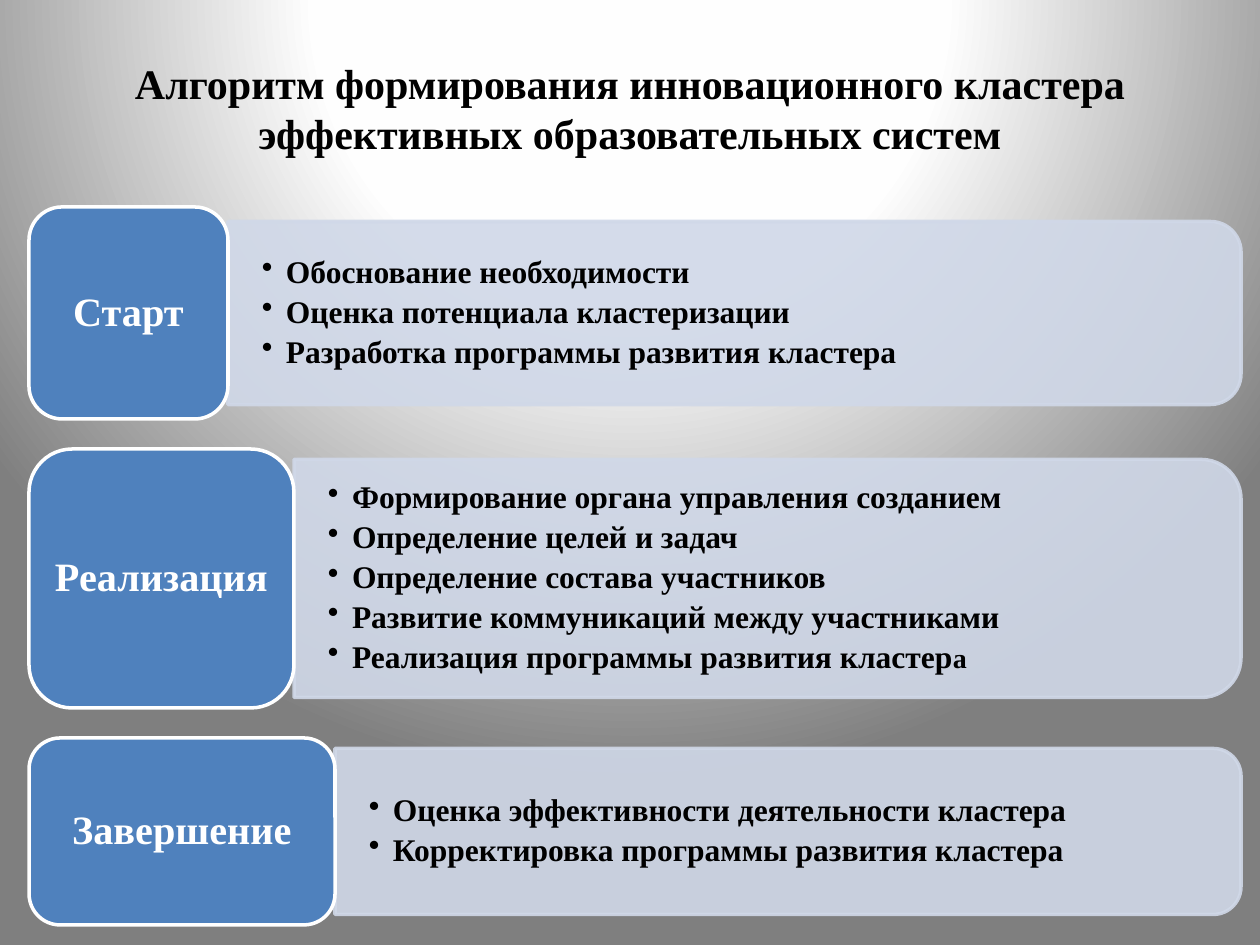
from lxml.etree import SubElement
from pptx import Presentation
from pptx.dml.color import RGBColor
from pptx.enum.shapes import MSO_SHAPE
from pptx.enum.text import MSO_ANCHOR, PP_ALIGN
from pptx.oxml import parse_xml
from pptx.oxml.ns import nsdecls, qn
from pptx.util import Emu, Pt

SCALE = 914400 / 126
LEFT, RIGHT, TOP, GAP = 29, 1241, 207, 30
# name, tag width, tag height, body height, items
STAGES = [
    ("Старт", 199, 212, 183, [
        "Обоснование необходимости",
        "Оценка потенциала кластеризации",
        "Разработка программы развития кластера"]),
    ("Реализация", 265, 259, 238, [
        "Формирование органа управления созданием",
        "Определение целей и задач",
        "Определение состава участников",
        "Развитие коммуникаций между участниками",
        "Реализация программы развития кластера"]),
    ("Завершение", 306, 187, 166, [
        "Оценка эффективности деятельности кластера",
        "Корректировка программы развития кластера"]),
]


def px(num):
    return Emu(round(num * SCALE))


def paint(form, tone, alpha=None):
    """Give a fill or line format a solid colour, with alpha in percent."""
    form.solid()
    form.fore_color.rgb = RGBColor.from_string(tone)
    if alpha:
        node = form._xPr.find(qn("a:solidFill"))[0]
        SubElement(node, qn("a:alpha"), val=str(alpha * 1000))


def write(shape, lines, size=18, tone="000000", align=PP_ALIGN.LEFT,
          space=None, after=0, inset=(0, 0), bullet=False):
    frame = shape.text_frame
    frame.word_wrap = True
    frame.vertical_anchor = MSO_ANCHOR.MIDDLE
    frame.margin_left = frame.margin_right = px(inset[0])
    frame.margin_top = frame.margin_bottom = px(inset[1])
    frame.text = "\n".join(lines)
    for para in frame.paragraphs:
        para.alignment = align
        para.line_spacing = space
        para.space_after = Pt(after)
        if bullet:
            props = para._p.get_or_add_pPr()
            props.set("marL", str(px(24)))
            props.set("indent", str(px(-24)))
            SubElement(props, qn("a:buChar"), char="•")
        for run in para.runs:
            font = run.font
            font.name, font.size, font.bold = "Times New Roman", Pt(size), True
            font.color.rgb = RGBColor.from_string(tone)


def block(slide, kind, box, fill, edge, alpha=None):
    shape = slide.shapes.add_shape(kind, *map(px, box))
    shape.shadow.inherit = False
    paint(shape.fill, fill, alpha)
    shape.line.width = Pt(2)
    paint(shape.line.fill, edge, alpha)
    return shape


def panel(slide, left, mid, high, items):
    """Draw a bar rounded on the right, with its list."""
    wide = RIGHT - left
    # The preset is rounded at the top, so it is drawn upright and turned.
    box = (left + (wide - high) / 2, mid - wide / 2, high, wide)
    bar = block(slide, MSO_SHAPE.ROUND_2_SAME_RECTANGLE, box,
                "D0D8E8", "D0D8E8", alpha=90)
    bar.rotation = 90
    text = slide.shapes.add_textbox(
        px(left), px(mid - high / 2), px(wide - 9), px(high))
    write(text, items, space=0.9, after=3.4, inset=(34, 18), bullet=True)
    return text


def tag(slide, top, wide, high, name):
    shape = block(slide, MSO_SHAPE.ROUNDED_RECTANGLE,
                  (LEFT, top, wide, high), "4F81BD", "FFFFFF")
    write(shape, [name], size=23, tone="FFFFFF", align=PP_ALIGN.CENTER,
          space=0.9, inset=(12, 6))


def backdrop(slide):
    """Set a round gradient centred above the slide."""
    stops = "".join(
        f'<a:gs pos="{pos * 1000}"><a:srgbClr val="{tone}"/></a:gs>'
        for pos, tone in [(0, "FFFFFF"), (40, "FEFEFE"), (100, "7F7F7F")])
    slide._element.cSld.insert(0, parse_xml(
        f'<p:bg {nsdecls("p", "a")}><p:bgPr><a:gradFill rotWithShape="1">'
        f'<a:gsLst>{stops}</a:gsLst><a:path path="circle"><a:fillToRect '
        'l="50000" t="-80000" r="50000" b="180000"/></a:path></a:gradFill>'
        '<a:effectLst/></p:bgPr></p:bg>'))


def main():
    deck = Presentation()
    deck.slide_width, deck.slide_height = px(1260), px(945)
    slide = deck.slides.add_slide(deck.slide_layouts[5])
    backdrop(slide)
    title = slide.shapes.title
    title.left, title.top, title.width, title.height = map(
        px, (63, 38, 1134, 139))
    write(title, ["Алгоритм формирования инновационного кластера "
                  "эффективных образовательных систем"],
          size=24, align=PP_ALIGN.CENTER, inset=(12, 6))
    top = TOP
    for name, wide, high, bar, items in STAGES:
        text = panel(slide, LEFT + wide, top + high / 2, bar, items)
        if name == "Реализация":
            last = text.text_frame.paragraphs[-1]
            run = last.runs[0]
            run.text = run.text[:-1]
            end = last.add_run()
            end.text = "а"
            end.font.name, end.font.size, end.font.bold = (
                "Times New Roman", Pt(16), True)
            end.font.color.rgb = RGBColor.from_string("000000")
        tag(slide, top, wide, high, name)
        top += high + GAP
    deck.save("out.pptx")


if __name__ == "__main__":
    main()
